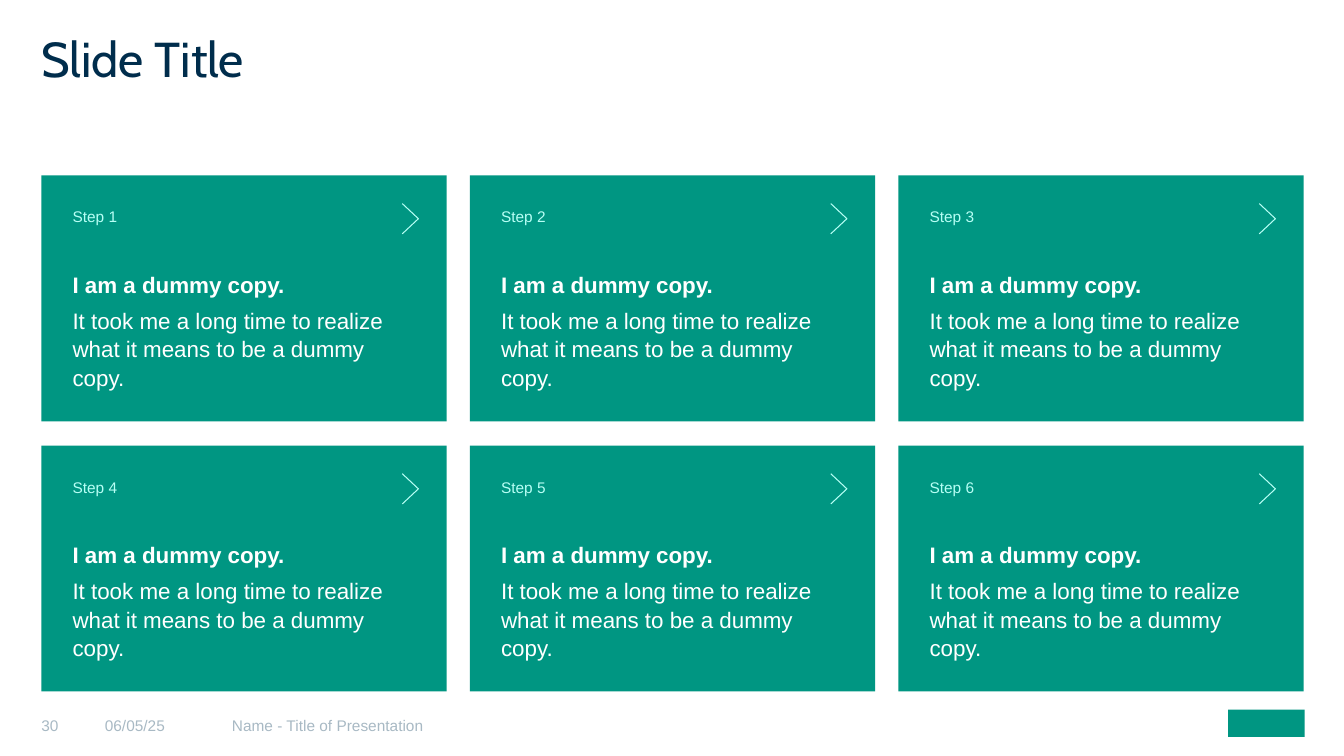
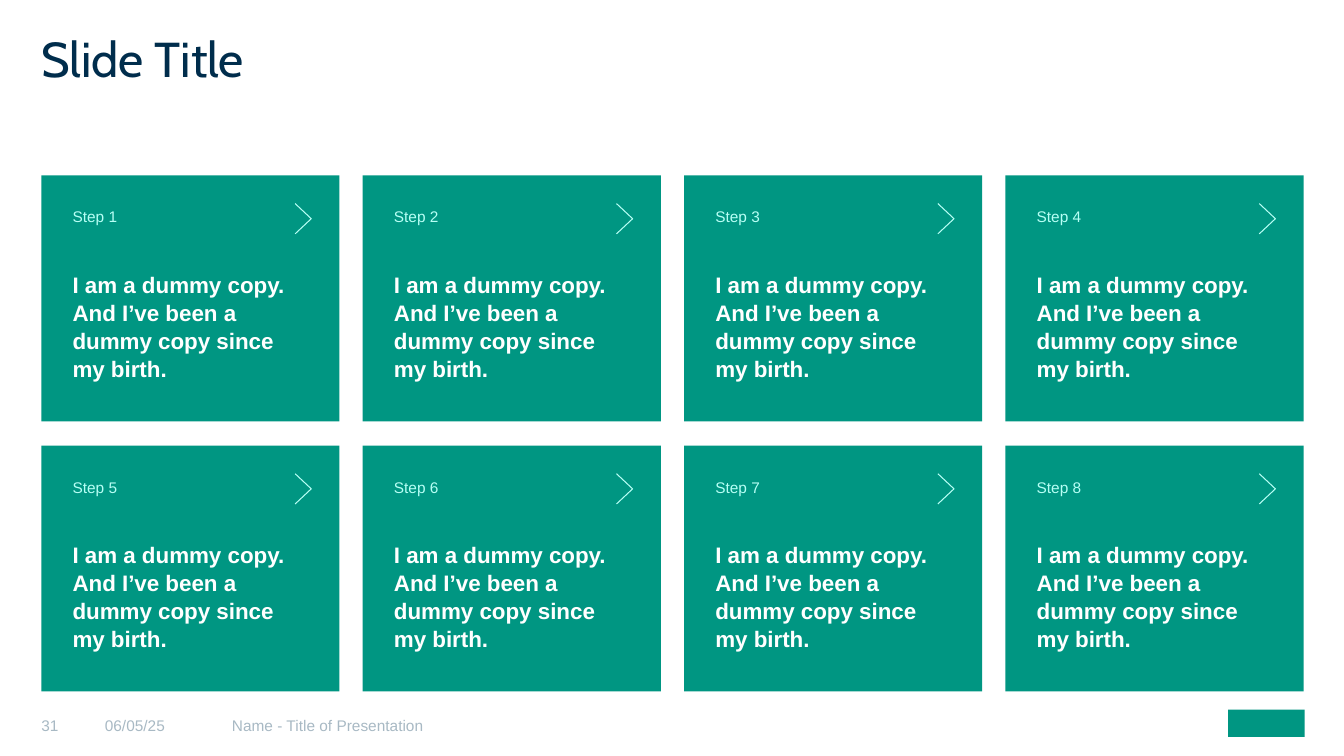
from pptx import Presentation
from pptx import util as u
from pptx.dml.color import RGBColor
from pptx.enum import shapes, text

# Palette and fonts
GREEN = RGBColor(0x00, 0x96, 0x82)
MINT = RGBColor(0xB7, 0xFF, 0xF5)
NAVY = RGBColor(0x00, 0x2D, 0x4C)
GREY = RGBColor(0xA8, 0xB9, 0xC4)
WHITE = RGBColor(0xFF, 0xFF, 0xFF)
TITLE_FONT = "Cabin"
BODY_FONT = "Arial"

# Grid, in inches
LEFT, CONTENT_WIDTH = 0.41, 12.52
CARD_TOP, CARD_HEIGHT = 1.74, 2.44
COLUMN_GAP, ROW_GAP = 0.23, 0.24
CARD_PADDING = 0.31
FOOTER_TOP, FOOTER_HEIGHT = 6.86, 0.64


def add_text(frame, content, first=False, size=16, color=WHITE, bold=False,
             font=BODY_FONT, before=0, after=0, line=1.0):
    """Write one paragraph into a text frame."""
    paragraph = frame.paragraphs[0] if first else frame.add_paragraph()
    paragraph.alignment = text.PP_ALIGN.LEFT
    paragraph.space_before, paragraph.space_after = u.Pt(before), u.Pt(after)
    paragraph.line_spacing = line
    run = paragraph.add_run()
    run.text = content
    run.font.name, run.font.size = font, u.Pt(size)
    run.font.bold, run.font.color.rgb = bold, color


def set_frame(frame, margins=(0, 0, 0, 0), anchor=text.MSO_ANCHOR.TOP):
    """Set wrapping, anchor and margins (left, top, right, bottom)."""
    frame.word_wrap = True
    frame.vertical_anchor = anchor
    (frame.margin_left, frame.margin_top,
     frame.margin_right, frame.margin_bottom) = map(u.Inches, margins)
    return frame


class Deck:
    """Shared style plus the slide being built."""

    def __init__(self):
        self.presentation = Presentation()
        self.presentation.slide_width = u.Inches(13.33)
        self.presentation.slide_height = u.Inches(7.5)
        self.slide = None

    def new_slide(self, title, number):
        blank = self.presentation.slide_layouts[6]
        self.slide = self.presentation.slides.add_slide(blank)
        self.emblem()
        self.title(title)
        self.footer(number)

    def text_box(self, left, top, width, height, **frame_format):
        box = self.slide.shapes.add_textbox(
            *map(u.Inches, (left, top, width, height)))
        return set_frame(box.text_frame, **frame_format)

    def rectangle(self, left, top, width, height):
        block = self.slide.shapes.add_shape(
            shapes.MSO_SHAPE.RECTANGLE,
            *map(u.Inches, (left, top, width, height)))
        block.shadow.inherit = False
        block.fill.solid()
        block.fill.fore_color.rgb = GREEN
        block.line.fill.background()
        return block

    def emblem(self):
        self.rectangle(12.18, 7.04, 0.76, 0.27)

    def title(self, content):
        frame = self.text_box(LEFT, 0.4, CONTENT_WIDTH, 1.1)
        add_text(frame, content, first=True, size=35, color=NAVY,
                 font=TITLE_FONT, line=0.8)

    def footer(self, number):
        parts = [(2.3, 6.38, "Name - Title of Presentation"),
                 (LEFT, 0.63, str(number)),
                 (1.04, 1.26, "06/05/25")]
        for left, width, content in parts:
            frame = self.text_box(left, FOOTER_TOP, width, FOOTER_HEIGHT,
                                  margins=(0, 0.04, 0, 0),
                                  anchor=text.MSO_ANCHOR.MIDDLE)
            add_text(frame, content, first=True, size=11, color=GREY)

    def chevron(self, tip_x, tip_y):
        back = u.Inches(tip_x - 0.16)
        upper, lower = u.Inches(tip_y - 0.15), u.Inches(tip_y + 0.15)
        builder = self.slide.shapes.build_freeform(back, upper)
        builder.add_line_segments(
            [(u.Inches(tip_x), u.Inches(tip_y)), (back, lower)], close=False)
        arrow = builder.convert_to_shape()
        arrow.shadow.inherit = False
        arrow.fill.background()
        arrow.line.color.rgb = MINT
        arrow.line.width = u.Pt(0.75)

    def card(self, left, top, width, step, heading, body):
        block = self.rectangle(left, top, width, CARD_HEIGHT)
        frame = set_frame(block.text_frame, margins=[CARD_PADDING] * 4)
        add_text(frame, f"Step {step}", first=True, size=11, color=MINT,
                 before=3, after=3, line=1.05)
        add_text(frame, heading, bold=True, before=28, after=3, line=1.05)
        if body:
            add_text(frame, body, before=3, after=3, line=1.05)
        self.chevron(left + width - 0.28, top + 0.43)

    def card_grid(self, columns, heading, body=None, rows=2):
        width = (CONTENT_WIDTH - (columns - 1) * COLUMN_GAP) / columns
        for index in range(rows * columns):
            row, column = divmod(index, columns)
            self.card(LEFT + column * (width + COLUMN_GAP),
                      CARD_TOP + row * (CARD_HEIGHT + ROW_GAP),
                      width, index + 1, heading, body)


def main():
    deck = Deck()

    # Six steps with heading and body
    deck.new_slide("Slide Title", 30)
    deck.card_grid(3, "I am a dummy copy.",
                   "It took me a long time to realize what it means "
                   "to be a dummy copy.")

    # Eight steps with heading only
    deck.new_slide("Slide Title", 31)
    deck.card_grid(4, "I am a dummy copy. And I’ve been a dummy copy "
                      "since my birth.")

    deck.presentation.save("out.pptx")


if __name__ == "__main__":
    main()
